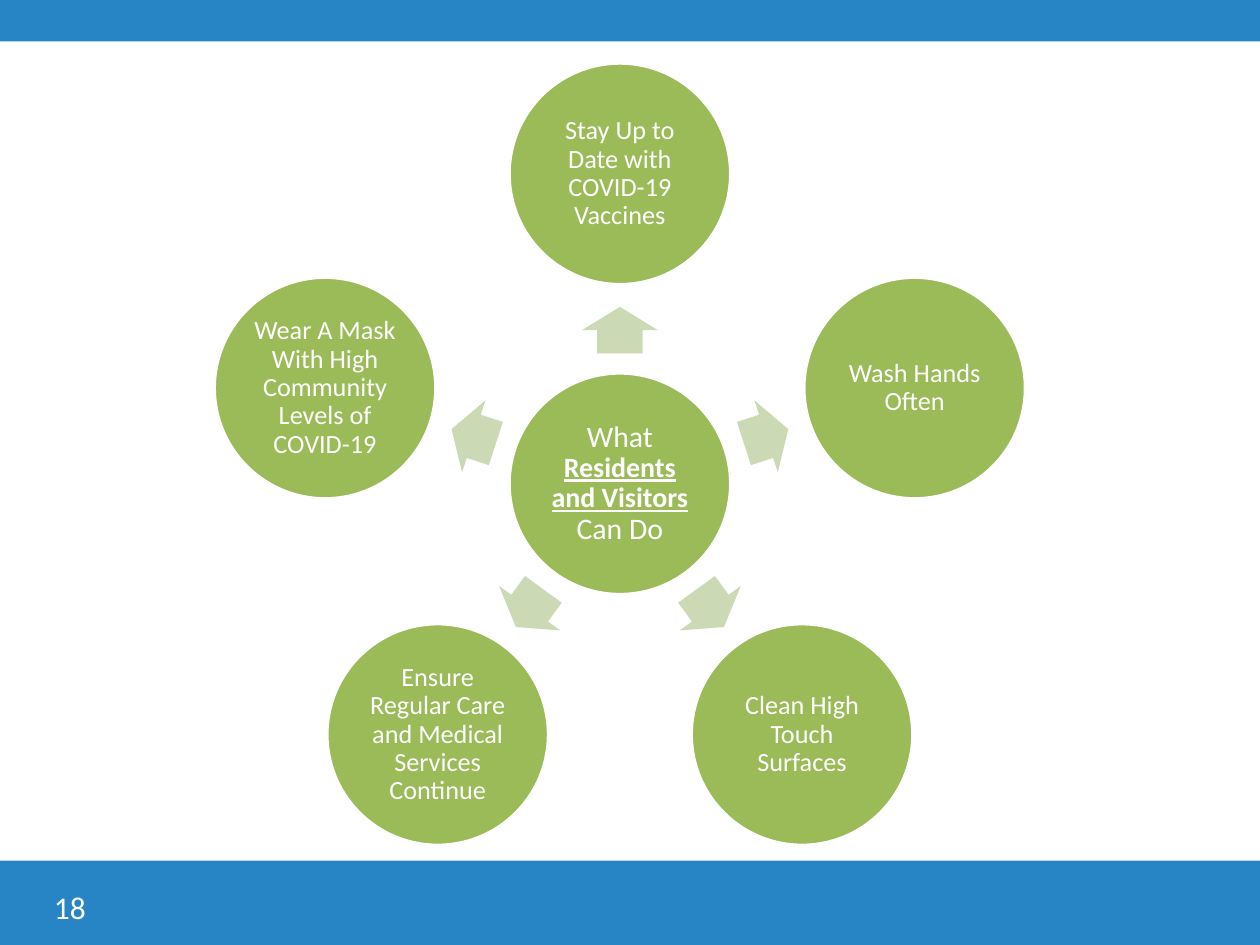
from dataclasses import dataclass
from math import cos, radians, sin

from pptx import Presentation
from pptx.dml.color import RGBColor
from pptx.enum.shapes import MSO_SHAPE as Shape
from pptx.enum.text import MSO_ANCHOR as Anchor, PP_ALIGN as Align
from pptx.util import Inches, Pt


def colour(value):
    return RGBColor.from_string(value)


@dataclass
class SlideBuilder:
    """Hold the style and the current slide, and add its elements."""

    page: object
    font: str = "Calibri"
    blue: str = "2784C5"
    green: str = "9BBB59"
    pale: str = "CBDAB5"
    white: str = "FFFFFF"

    def shape(self, kind, left, top, width, height, fill):
        box = self.page.shapes.add_shape(
            kind, Inches(left), Inches(top), Inches(width), Inches(height))
        box.shadow.inherit = False
        box.fill.solid()
        box.fill.fore_color.rgb = colour(fill)
        box.line.fill.background()
        return box

    def band(self, top, height):
        self.shape(Shape.RECTANGLE, 0, top, 10, height, self.blue)

    def span(self, para, text, size, strong=False):
        span = para.add_run()
        span.text = text
        span.font.name = self.font
        span.font.size = Pt(size)
        span.font.bold = strong
        span.font.underline = strong
        span.font.color.rgb = colour(self.white)

    def circle(self, x, y, spans, size=1.76):
        box = self.shape(Shape.OVAL, x - size / 2, y - size / 2, size, size, self.green)
        box.line.color.rgb = colour(self.white)
        box.line.width = Pt(2)
        frame = box.text_frame
        frame.word_wrap = True
        frame.vertical_anchor = Anchor.MIDDLE
        frame.margin_left = frame.margin_right = Inches(0.02)
        frame.margin_top = frame.margin_bottom = Inches(0.02)
        para = frame.paragraphs[0]
        para.alignment = Align.CENTER
        para.line_spacing = 0.9
        for span in spans:
            self.span(para, *span)

    def arrow(self, x, y, angle, width=0.37, height=0.6):
        box = self.shape(Shape.RIGHT_ARROW, x - width / 2, y - height / 2,
                         width, height, self.pale)
        box.adjustments[0] = 0.6
        box.adjustments[1] = 0.5
        box.rotation = angle % 360

    def page_number(self, text):
        box = self.page.shapes.add_textbox(
            Inches(0.33), Inches(7), Inches(2.33), Inches(0.4))
        box.text_frame.word_wrap = True
        self.span(box.text_frame.paragraphs[0], text, 18)


def main():
    deck = Presentation()
    deck.slide_width, deck.slide_height = Inches(10), Inches(7.5)
    slide = SlideBuilder(deck.slides.add_slide(deck.slide_layouts[6]))

    slide.band(0, 0.33)
    slide.band(6.83, 0.67)
    slide.page_number("18")

    center_x, center_y = 4.92, 3.84
    arrow_radius, circle_radius = 1.22, 2.46
    slide.circle(center_x, center_y, [
        ("What ", 17),
        ("Residents and Visitors ", 16, True),
        ("Can Do", 17),
    ])
    actions = [
        "Stay Up to Date with COVID-19 Vaccines",
        "Wash Hands Often",
        "Clean High Touch Surfaces",
        "Ensure Regular Care and Medical Services Continue",
        "Wear A Mask With High Community Levels of COVID-19",
    ]
    for index, action in enumerate(actions):
        angle = -90 + index * 360 / len(actions)
        across, down = cos(radians(angle)), sin(radians(angle))
        slide.arrow(center_x + arrow_radius * across,
                    center_y + arrow_radius * down, angle)
        slide.circle(center_x + circle_radius * across,
                     center_y + circle_radius * down, [(action, 15)])

    deck.save("out.pptx")


if __name__ == "__main__":
    main()
